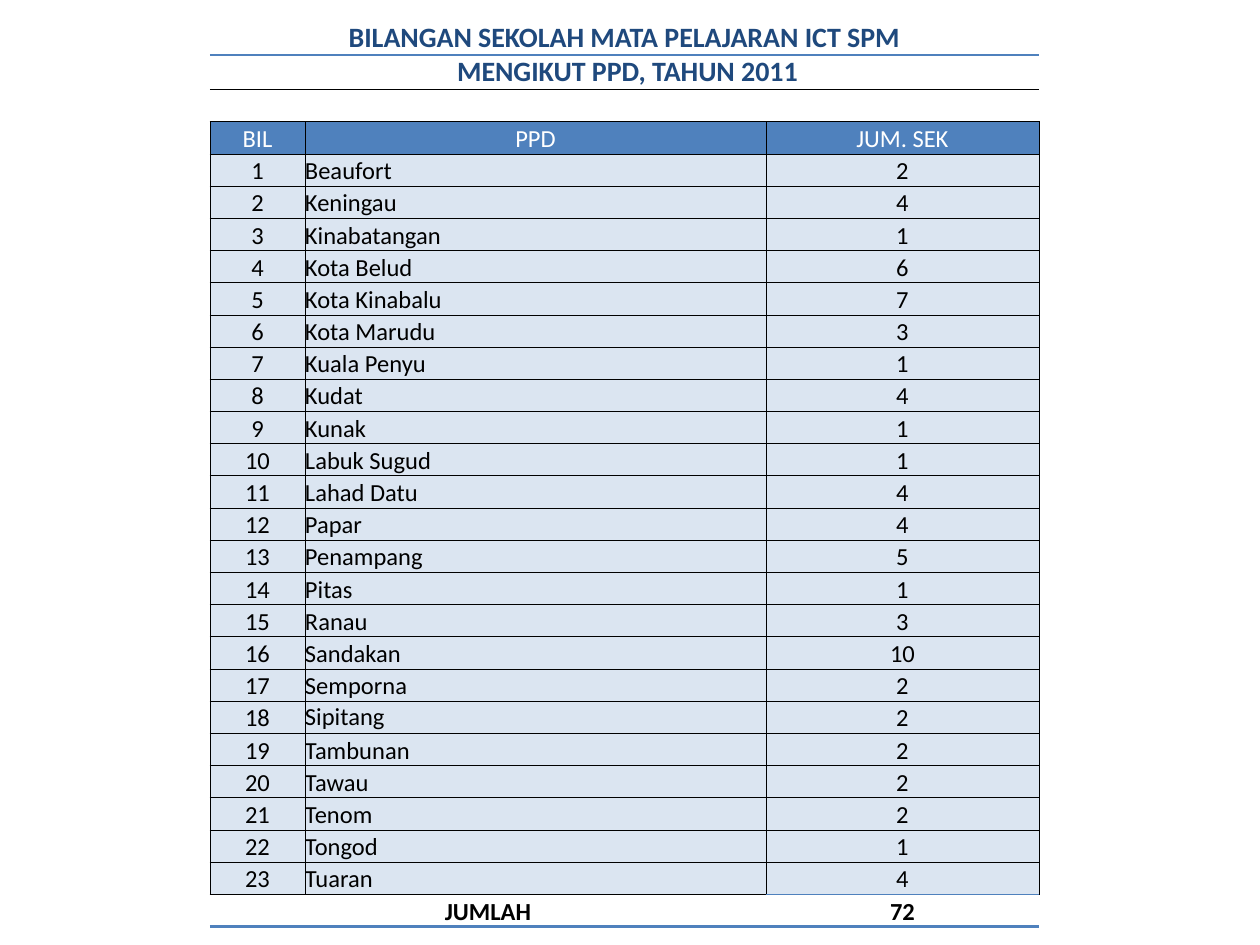
"""Build a slide with the table of ICT SPM schools per district office, 2011."""
from lxml.etree import SubElement
from pptx import Presentation
from pptx.dml.color import RGBColor
from pptx.enum.text import MSO_ANCHOR, PP_ALIGN
from pptx.oxml import parse_xml
from pptx.oxml.ns import nsdecls, qn
from pptx.util import Emu, Pt

NAVY = RGBColor(0x1F, 0x49, 0x7D)
BLUE = RGBColor(0x4F, 0x81, 0xBD)
PALE = RGBColor(0xDB, 0xE5, 0xF1)
BLACK = RGBColor(0, 0, 0)
WHITE = RGBColor(0xFF, 0xFF, 0xFF)

THIN = (BLACK, 0.5)
THIN_BLUE = (BLUE, 0.5)
TITLE_RULE = (BLUE, 1.5)
TOTAL_RULE = (BLUE, 2)
BOX = dict.fromkeys("LRTB", THIN)

TITLES = ["BILANGAN SEKOLAH MATA PELAJARAN ICT SPM", " MENGIKUT PPD, TAHUN 2011"]
HEADERS = ["BIL", "PPD", "JUM. SEK"]
SCHOOLS = [
    ("Beaufort", 2), ("Keningau", 4), ("Kinabatangan", 1), ("Kota Belud", 6),
    ("Kota Kinabalu", 7), ("Kota Marudu", 3), ("Kuala Penyu", 1), ("Kudat", 4),
    ("Kunak", 1), ("Labuk Sugud", 1), ("Lahad Datu", 4), ("Papar", 4),
    ("Penampang", 5), ("Pitas", 1), ("Ranau", 3), ("Sandakan", 10),
    ("Semporna", 2), ("Sipitang", 2), ("Tambunan", 2), ("Tawau", 2),
    ("Tenom", 2), ("Tongod", 1), ("Tuaran", 4),
]


class Deck:
    """Hold the style and the current slide."""

    font = "Calibri"
    size = 14

    def __init__(self, width, height):
        self.prs = Presentation()
        self.prs.slide_width = self.px(width)
        self.prs.slide_height = self.px(height)
        self.s = self.prs.slides.add_slide(self.prs.slide_layouts[6])

    @staticmethod
    def px(n):
        """Turn px into EMU."""
        return Emu(round(n * 914400 / 126))

    def table(self, left, top, widths, heights):
        """Add a plain table with the given column widths and EMU row heights."""
        frame = self.s.shapes.add_table(
            len(heights), len(widths), self.px(left), self.px(top),
            self.px(sum(widths)), Emu(sum(heights)))
        table = frame.table
        table.first_row = table.horz_banding = False
        for column, width in zip(table.columns, widths):
            column.width = self.px(width)
        for row, height in zip(table.rows, heights):
            row.height = height
        return table

    def cell(self, cell, text="", size=None, color=BLACK, bold=False, fill=None,
             align=PP_ALIGN.CENTER, anchor=MSO_ANCHOR.BOTTOM, borders=BOX):
        """Fill one cell with text, colour and borders."""
        cell.margin_left = cell.margin_right = cell.margin_top = cell.margin_bottom = 0
        cell.vertical_anchor = anchor
        p = cell.text_frame.paragraphs[0]
        p.alignment = align
        if text:
            r = p.add_run()
            r.text = text
            r.font.name, r.font.size = self.font, Pt(size or self.size)
            r.font.bold, r.font.color.rgb = bold, color
        else:
            SubElement(p._p, qn("a:endParaRPr"), sz=str(self.size * 100))
        if fill is None:
            cell.fill.background()
        else:
            cell.fill.solid()
            cell.fill.fore_color.rgb = fill
        tc_pr = cell._tc.get_or_add_tcPr()
        for i, side in enumerate("LRTB"):
            tc_pr.insert(i, self.border(side, borders.get(side)))

    @staticmethod
    def border(side, line):
        """Make the border element of one cell side."""
        if line is None:
            return parse_xml(f'<a:ln{side} {nsdecls("a")} w="0"><a:noFill/></a:ln{side}>')
        color, width = line
        return parse_xml(
            f'<a:ln{side} {nsdecls("a")} w="{Pt(width)}"><a:solidFill>'
            f'<a:srgbClr val="{color}"/></a:solidFill></a:ln{side}>')


def main():
    deck = Deck(1260, 945)
    title_height = deck.px(34)
    row_count = len(SCHOOLS) + 3
    row_height = Emu(deck.px(838) // row_count)
    table = deck.table(210, 21, [95, 461, 273],
                       [title_height] * 2 + [row_height] * row_count)

    title_borders = [{"B": TITLE_RULE}, {"T": TITLE_RULE, "B": THIN}]
    for row, (title, borders) in enumerate(zip(TITLES, title_borders)):
        for col, text in enumerate([title, "", ""]):
            deck.cell(table.cell(row, col), text, size=16, color=NAVY, bold=True,
                      borders=borders)
        table.cell(row, 0).merge(table.cell(row, 2))

    for col, header in enumerate(HEADERS):
        deck.cell(table.cell(2, col), borders={"T": THIN, "B": THIN})
        deck.cell(table.cell(3, col), header, color=WHITE, fill=BLUE)

    for number, (district, count) in enumerate(SCHOOLS, 1):
        row = number + 3
        anchor = MSO_ANCHOR.MIDDLE if district == "Sipitang" else MSO_ANCHOR.BOTTOM
        borders = {**BOX, "B": THIN_BLUE} if number == len(SCHOOLS) else BOX
        deck.cell(table.cell(row, 0), str(number), fill=PALE)
        deck.cell(table.cell(row, 1), district, fill=PALE, align=PP_ALIGN.LEFT,
                  anchor=anchor)
        deck.cell(table.cell(row, 2), str(count), fill=PALE, borders=borders)

    last = len(SCHOOLS) + 4
    total = str(sum(count for _, count in SCHOOLS))
    for col, (text, top) in enumerate([("JUMLAH", THIN), ("", THIN), (total, THIN_BLUE)]):
        deck.cell(table.cell(last, col), text, bold=True,
                  borders={"T": top, "B": TOTAL_RULE})
    table.cell(last, 0).merge(table.cell(last, 1))

    deck.prs.save("out.pptx")


if __name__ == "__main__":
    main()
